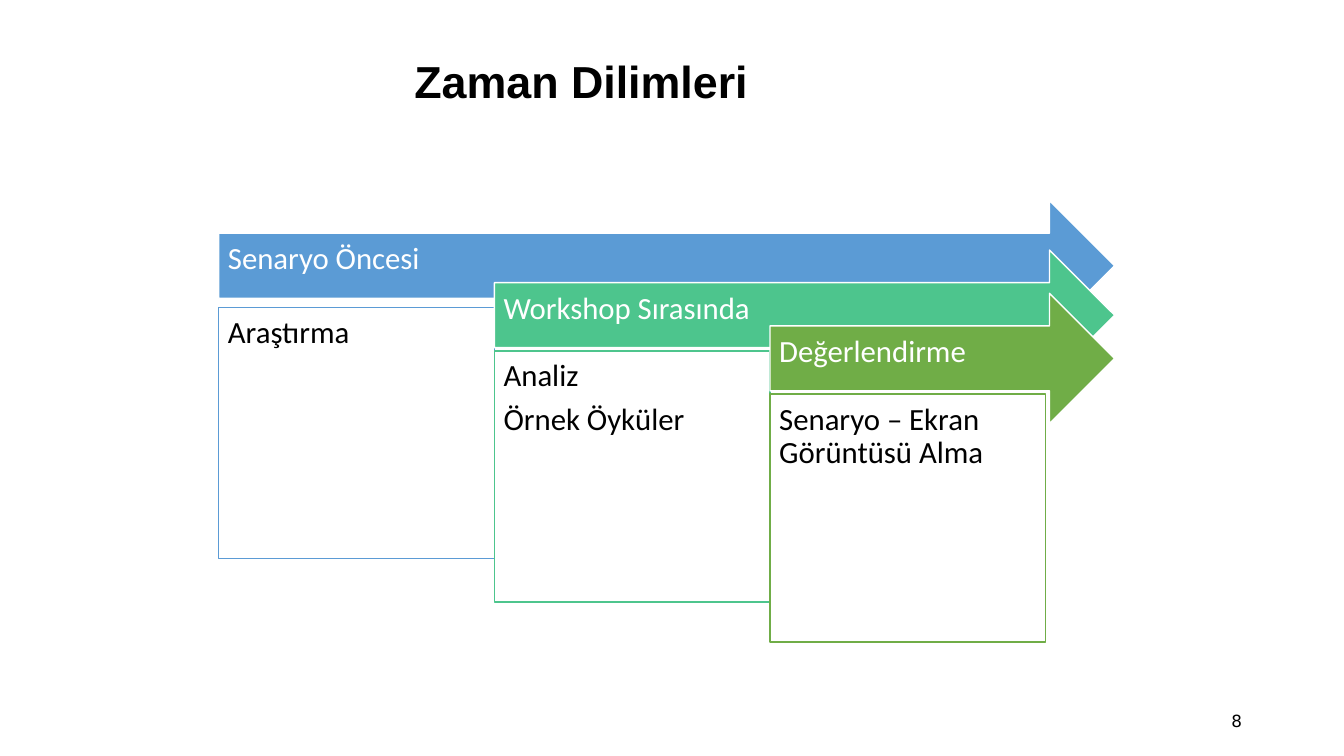
from dataclasses import dataclass

from pptx import Presentation
from pptx.dml.color import RGBColor
from pptx.enum.shapes import MSO_SHAPE
from pptx.enum.text import MSO_ANCHOR, PP_ALIGN
from pptx.util import Pt

ARROW, RECT = MSO_SHAPE.RIGHT_ARROW, MSO_SHAPE.RECTANGLE
TOP, MIDDLE = MSO_ANCHOR.TOP, MSO_ANCHOR.MIDDLE
LEFT, RIGHT = PP_ALIGN.LEFT, PP_ALIGN.RIGHT

STAGE_LEFT, STAGE_STEP = 156.24, 196.9
ARROW_RIGHT, ARROW_HEIGHT = 796.2, 93
BOX_TOP, BOX_STEP = 219.6, 31


@dataclass
class Stage:
    heading: str
    items: list[str]
    color: str
    arrow_top: float
    box_height: float


STAGES = [
    Stage("Senaryo Öncesi", ["Araştırma"], "5B9BD5", 143.3, 179.3),
    Stage("Workshop Sırasında", ["Analiz", "Örnek Öyküler"], "4DC58D", 178.6, 179.3),
    Stage("Değerlendirme", ["Senaryo – Ekran Görüntüsü Alma"], "70AD47", 209.5, 177.1),
]


def rgb(color: str) -> RGBColor:
    return RGBColor.from_string(color)


def style(p, size: float, font: str, color: str, align=LEFT, bold: bool = False) -> None:
    p.alignment = align
    p.font.size = Pt(size)
    p.font.name = font
    p.font.bold = bold
    p.font.color.rgb = rgb(color)


def add_block(s, kind, box: tuple, fill: str, line: str, lines: list[str],
              color: str, anchor, right: float, bottom: float) -> None:
    sp = s.shapes.add_shape(kind, *map(Pt, box))
    sp.shadow.inherit = False
    sp.fill.solid()
    sp.fill.fore_color.rgb = rgb(fill)
    sp.line.color.rgb = rgb(line)
    sp.line.width = Pt(1)
    tf = sp.text_frame
    tf.word_wrap = True
    tf.vertical_anchor = anchor
    tf.margin_left = tf.margin_top = Pt(6.6)
    tf.margin_right, tf.margin_bottom = Pt(right), Pt(bottom)
    tf.text = "\n".join(lines)
    for p in tf.paragraphs:
        style(p, 22, "Calibri", color)
        p.line_spacing = 0.9
        p.space_after = Pt(7.7)


def add_stage(s, index: int, stage: Stage) -> None:
    x = STAGE_LEFT + index * STAGE_STEP
    add_block(s, ARROW, (x, stage.arrow_top, ARROW_RIGHT - x, ARROW_HEIGHT),
              stage.color, "FFFFFF", [stage.heading], "FFFFFF", MIDDLE, 20, 15)
    add_block(s, RECT, (x, BOX_TOP + index * BOX_STEP, STAGE_STEP, stage.box_height),
              "FFFFFF", stage.color, stage.items, "000000", TOP, 6.6, 6.6)


def add_title(s, text: str) -> None:
    title = s.shapes.title
    title.left, title.top, title.width, title.height = map(Pt, (288.7, 30.2, 620.6, 59.8))
    tf = title.text_frame
    tf.text = text
    tf.vertical_anchor = MIDDLE
    p = tf.paragraphs[0]
    style(p, 32, "Arial", "000000", bold=True)
    p.line_spacing = 0.9


def add_page_number(s, number: str) -> None:
    tf = s.shapes.add_textbox(*map(Pt, (678.2, 500.4, 216, 28.8))).text_frame
    tf.word_wrap = True
    tf.vertical_anchor = MIDDLE
    tf.text = number
    style(tf.paragraphs[0], 12, "DejaVu Sans", "000000", RIGHT)


def main() -> None:
    prs = Presentation()
    prs.slide_width, prs.slide_height = Pt(960), Pt(540)
    s = prs.slides.add_slide(prs.slide_layouts[5])
    add_title(s, "Zaman Dilimleri")
    add_page_number(s, "8")
    for index, stage in enumerate(STAGES):
        add_stage(s, index, stage)
    prs.save("out.pptx")


if __name__ == "__main__":
    main()
